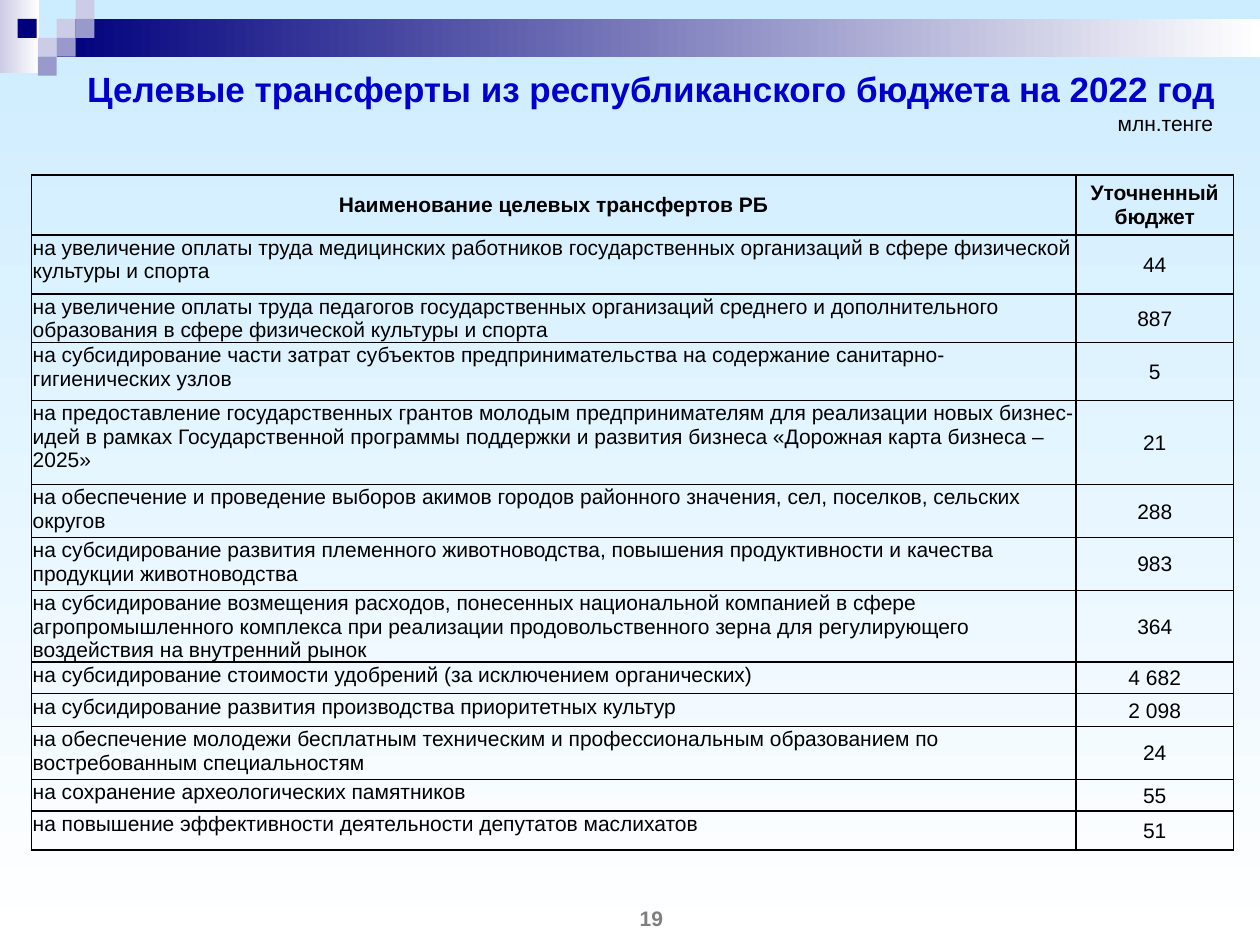
"""Build the slide of targeted transfers from the republican budget."""
import dataclasses

import lxml.etree
import pptx
import pptx.dml.color
import pptx.enum.shapes
import pptx.enum.text
import pptx.oxml.ns
import pptx.util

Inches = pptx.util.Inches
Pt = pptx.util.Pt
ALIGN = pptx.enum.text.PP_ALIGN
MIDDLE = pptx.enum.text.MSO_ANCHOR.MIDDLE
TOP = pptx.enum.text.MSO_ANCHOR.TOP

COLORS = {
    "sky": "CCECFF",
    "white": "FFFFFF",
    "navy": "00007D",
    "lilac": "CCCCE6",
    "violet": "9999CC",
    "title": "0000CC",
    "text": "000000",
    "number": "7F7F7F",
}


@dataclasses.dataclass
class Block:
    """A decorative rectangle; with an end colour it is a gradient."""
    left: float
    top: float
    width: float
    height: float
    color: str
    end: str = ""


@dataclasses.dataclass
class Transfer:
    """One table row: purpose, amount in millions and row height."""
    purpose: str
    amount: str
    height: float


SQUARE = 0.15
BLOCKS = [
    Block(0, 0, 0.31, 0.58, "lilac", "white"),
    Block(0.45, 0.15, 9.55, 0.3, "navy", "white"),
] + [
    Block(left, top, SQUARE, SQUARE, color)
    for left, top, color in [
        (0.45, 0.15, "lilac"), (0.6, 0, "lilac"), (0.6, 0.15, "violet"),
        (0.3, 0.3, "lilac"), (0.14, 0.15, "navy"), (0.45, 0.3, "violet"),
        (0.3, 0.45, "violet"),
    ]
]

HEADER = Transfer("Наименование целевых трансфертов РБ", "Уточненный бюджет", 0.44)
TRANSFERS = [
    Transfer("на увеличение оплаты труда медицинских работников государственных "
             "организаций в сфере физической культуры и спорта", "44", 0.47),
    Transfer("на увеличение оплаты труда педагогов государственных организаций среднего "
             "и дополнительного образования в сфере физической культуры и спорта", "887", 0.34),
    Transfer("на субсидирование части затрат субъектов предпринимательства на содержание "
             "санитарно-гигиенических узлов", "5", 0.46),
    Transfer("на предоставление государственных грантов молодым предпринимателям для "
             "реализации новых бизнес-идей в рамках Государственной программы поддержки "
             "и развития бизнеса «Дорожная карта бизнеса – 2025»", "21", 0.67),
    Transfer("на обеспечение и проведение выборов акимов городов районного значения, сел, "
             "поселков, сельских округов", "288", 0.42),
    Transfer("на субсидирование развития племенного животноводства, повышения "
             "продуктивности и качества продукции животноводства", "983", 0.42),
    Transfer("на субсидирование возмещения расходов, понесенных национальной компанией в "
             "сфере агропромышленного комплекса при реализации продовольственного зерна "
             "для регулирующего воздействия на внутренний рынок", "364", 0.42),
    Transfer("на субсидирование стоимости удобрений (за исключением органических)", "4 682", 0.25),
    Transfer("на субсидирование развития производства приоритетных культур", "2 098", 0.26),
    Transfer("на обеспечение молодежи бесплатным техническим и профессиональным "
             "образованием по востребованным специальностям", "24", 0.42),
    Transfer("на сохранение археологических памятников", "55", 0.25),
    Transfer("на повышение эффективности деятельности депутатов маслихатов", "51", 0.31),
]


def rgb(name: str) -> pptx.dml.color.RGBColor:
    """Look up a named colour."""
    return pptx.dml.color.RGBColor.from_string(COLORS[name])


def set_gradient(fill, start: str, end: str, angle: float) -> None:
    """Give a fill a two-colour linear gradient."""
    fill.gradient()
    fill.gradient_angle = angle
    for stop, name in zip(fill.gradient_stops, (start, end)):
        stop.color.rgb = rgb(name)


def draw_block(page, block: Block) -> None:
    """Draw one decorative rectangle."""
    shape = page.shapes.add_shape(
        pptx.enum.shapes.MSO_SHAPE.RECTANGLE, Inches(block.left), Inches(block.top),
        Inches(block.width), Inches(block.height))
    shape.shadow.inherit = False
    shape.line.fill.background()
    if block.end:
        set_gradient(shape.fill, block.color, block.end, 0)
    else:
        shape.fill.solid()
        shape.fill.fore_color.rgb = rgb(block.color)


def write(frame, text: str, size: float = 12, color: str = "text",
          bold: bool = False, align=ALIGN.CENTER) -> None:
    """Set a one-paragraph text and format its run."""
    frame.text = text
    para = frame.paragraphs[0]
    para.alignment = align
    font = para.runs[0].font
    font.name, font.size, font.bold = "Arial", Pt(size), bold
    font.color.rgb = rgb(color)


def place(box, left: float, top: float, width: float, height: float) -> None:
    """Position a text shape and centre its text vertically."""
    box.left, box.top = Inches(left), Inches(top)
    box.width, box.height = Inches(width), Inches(height)
    box.text_frame.word_wrap = True
    box.text_frame.auto_size = pptx.enum.text.MSO_AUTO_SIZE.NONE
    box.text_frame.vertical_anchor = MIDDLE


def add_label(page, area: tuple[float, float, float, float], text: str, **style) -> None:
    """Add a centred text box."""
    box = page.shapes.add_textbox(0, 0, 0, 0)
    place(box, *area)
    write(box.text_frame, text, **style)


def add_borders(cell) -> None:
    """Outline a cell on all sides."""
    properties = cell._tc.get_or_add_tcPr()
    for index, side in enumerate(("lnL", "lnR", "lnT", "lnB")):
        line = lxml.etree.Element(pptx.oxml.ns.qn(f"a:{side}"), w=str(Pt(1)))
        fill = lxml.etree.SubElement(line, pptx.oxml.ns.qn("a:solidFill"))
        lxml.etree.SubElement(fill, pptx.oxml.ns.qn("a:srgbClr"), val=COLORS["text"])
        properties.insert(index, line)


def draw_cell(cell, text: str, is_header: bool, is_amount: bool) -> None:
    """Fill and format one table cell."""
    centered = is_header or is_amount
    write(cell.text_frame, text, bold=is_header,
          align=ALIGN.CENTER if centered else ALIGN.LEFT)
    if is_header:
        cell.text_frame.paragraphs[0].space_before = Pt(2.4)
    margins = (0.1, 0.05, 0.1, 0.05) if is_header else (0.01, 0.01, 0.01, 0)
    (cell.margin_left, cell.margin_top,
     cell.margin_right, cell.margin_bottom) = map(Inches, margins)
    cell.vertical_anchor = MIDDLE if is_header != is_amount else TOP
    cell.fill.background()
    add_borders(cell)


def draw_table(page, rows: list[Transfer]) -> None:
    """Draw the table of transfers."""
    height = sum(row.height for row in rows)
    table = page.shapes.add_table(
        len(rows), 2, Inches(0.25), Inches(1.39), Inches(9.54), Inches(height)).table
    table.first_row = table.horz_banding = False
    table.columns[0].width, table.columns[1].width = Inches(8.29), Inches(1.25)
    for index, row in enumerate(rows):
        table.rows[index].height = Inches(row.height)
        draw_cell(table.cell(index, 0), row.purpose, index == 0, False)
        draw_cell(table.cell(index, 1), row.amount, index == 0, True)


def main() -> None:
    """Build and save the deck."""
    deck = pptx.Presentation()
    deck.slide_width, deck.slide_height = Inches(10), Inches(7.5)
    page = deck.slides.add_slide(deck.slide_layouts[5])
    set_gradient(page.background.fill, "sky", "white", 270)
    for block in BLOCKS:
        draw_block(page, block)
    title = page.shapes.title
    place(title, 0.4, 0.37, 9.54, 0.67)
    write(title.text_frame, "Целевые трансферты из республиканского бюджета на 2022 год",
          size=20, color="title", bold=True)
    draw_table(page, [HEADER] + TRANSFERS)
    add_label(page, (8.56, 0.61, 1.38, 0.74), "млн.тенге")
    add_label(page, (4.17, 7.08, 2, 0.42), "19", color="number", bold=True)
    deck.save("out.pptx")


if __name__ == "__main__":
    main()
